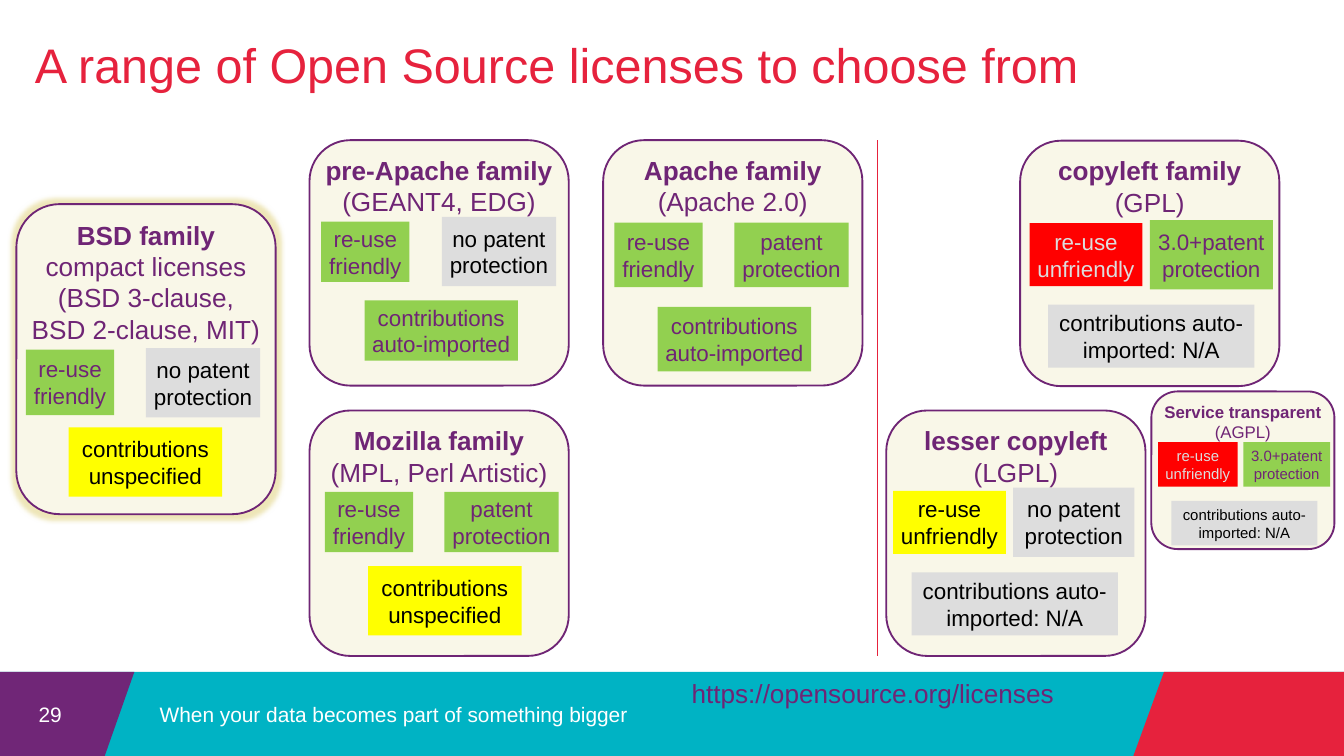
"""Build a slide that compares families of Open Source licenses."""
from lxml import etree
from pptx import Presentation
from pptx.dml.color import RGBColor
from pptx.enum.shapes import MSO_CONNECTOR, MSO_SHAPE
from pptx.enum.text import MSO_ANCHOR, MSO_AUTO_SIZE, PP_ALIGN
from pptx.oxml.ns import qn
from pptx.util import Cm, Pt

RECT, ROUND = MSO_SHAPE.RECTANGLE, MSO_SHAPE.ROUNDED_RECTANGLE
STRAIGHT = MSO_CONNECTOR.STRAIGHT
TOP, MIDDLE = MSO_ANCHOR.TOP, MSO_ANCHOR.MIDDLE
LEFT, CENTER = PP_ALIGN.LEFT, PP_ALIGN.CENTER
NO_FIT = MSO_AUTO_SIZE.NONE

WIDTH, HEIGHT, FOOTER_TOP = 25.4, 14.29, 12.7
CARD_W, CARD_H = 4.9, 4.64

COLORS = {
    "purple": "6F2575", "band": "702677", "teal": "00B3C4", "red": "E6223D",
    "divider": "E6223C", "cream": "F9F7E8", "glow": "E3D68A", "white": "FFFFFF",
    "black": "000000", "green": "92D050", "gray": "DDDDDD", "yellow": "FFFF00",
    "alert": "FF0000",
}
CHIP_TEXT = {"green": "purple", "gray": "black", "yellow": "black", "alert": "gray"}

FRIENDLY, UNFRIENDLY = "re-use friendly", "re-use unfriendly"
PATENT, NO_PATENT, PATENT_3 = "patent protection", "no patent protection", "3.0+patent protection"
IMPORTED, UNSPECIFIED = "contributions auto-imported", "contributions unspecified"
NOT_APPLICABLE = "contributions auto-imported: N/A"

FULL = {"size": 14, "chip_size": 12, "inset": 0.14}
SMALL = {"size": 9, "chip_size": 8, "inset": 0.08}

FAMILIES = [
    ("BSD family", "compact licenses (BSD 3-clause, BSD 2-clause, MIT)",
     (0.31, 3.86, CARD_W, 5.86), FULL, [
         (FRIENDLY, "green", (0.49, 6.61, 1.67, 1.24)),
         (NO_PATENT, "gray", (2.76, 6.58, 2.16, 1.31)),
         (UNSPECIFIED, "yellow", (1.3, 8.08, 2.9, 1.31))]),
    ("Mozilla family", "(MPL, Perl Artistic)", (5.85, 7.76, CARD_W, CARD_H), FULL, [
        (FRIENDLY, "green", (6.14, 9.3, 1.67, 1.14)),
        (PATENT, "green", (8.4, 9.3, 2.16, 1.14)),
        (UNSPECIFIED, "yellow", (6.96, 10.7, 2.9, 1.31))]),
    ("Apache family", "(Apache 2.0)", (11.4, 2.65, CARD_W, CARD_H), FULL, [
        (FRIENDLY, "green", (11.61, 4.21, 1.67, 1.22)),
        (PATENT, "green", (13.88, 4.21, 2.16, 1.22)),
        (IMPORTED, "green", (12.43, 5.8, 2.9, 1.22))]),
    ("copyleft family", "(GPL)", (19.28, 2.66, CARD_W, CARD_H), FULL, [
        (UNFRIENDLY, "alert", (19.46, 4.22, 2.13, 1.19)),
        (PATENT_3, "green", (21.73, 4.16, 2.33, 1.31)),
        (NOT_APPLICABLE, "gray", (19.81, 5.76, 3.9, 1.19))]),
    ("lesser copyleft", "(LGPL)", (16.75, 7.76, CARD_W, CARD_H), FULL, [
        (UNFRIENDLY, "yellow", (16.88, 9.28, 2.13, 1.19)),
        (NO_PATENT, "gray", (19.15, 9.22, 2.29, 1.31)),
        (NOT_APPLICABLE, "gray", (17.23, 10.82, 3.9, 1.19))]),
    ("pre-Apache family", "(GEANT4, EDG)", (5.85, 2.65, CARD_W, CARD_H), FULL, [
        (FRIENDLY, "green", (6.07, 4.19, 1.67, 1.14)),
        (NO_PATENT, "gray", (8.35, 4.1, 2.16, 1.31)),
        (IMPORTED, "green", (6.89, 5.68, 2.9, 1.14))]),
    ("Service transparent", "(AGPL)", (21.76, 7.4, 3.46, 2.98), SMALL, [
        (UNFRIENDLY, "alert", (21.89, 8.36, 1.5, 0.84)),
        (PATENT_3, "green", (23.5, 8.36, 1.64, 0.84)),
        (NOT_APPLICABLE, "gray", (22.14, 9.47, 2.76, 0.84))]),
]


def rgb(name):
    """Return the named colour."""
    return RGBColor.from_string(COLORS[name])


def cm(box):
    """Convert numbers in centimetres to lengths."""
    return [Cm(v) for v in box]


def set_attrs(obj, values):
    """Set each attribute of obj from a dict."""
    for name, value in values.items():
        setattr(obj, name, value)


def format_frame(tf, inset=(0, 0), anchor=MIDDLE, wrap=True):
    """Set the insets (sides, top and bottom), anchor and wrapping of a frame."""
    side, end = cm(inset)
    set_attrs(tf, {
        "margin_left": side, "margin_right": side, "margin_top": end,
        "margin_bottom": end, "vertical_anchor": anchor, "word_wrap": wrap,
        "auto_size": NO_FIT})


def write(p, text, size, color, align=LEFT, bold=False):
    """Write one run of formatted text into a paragraph."""
    p.alignment = align
    r = p.add_run()
    r.text = text
    set_attrs(r.font, {"name": "Arial", "size": Pt(size), "bold": bold})
    r.font.color.rgb = rgb(color)


def paint(sp, fill, line=None):
    """Give a shape a plain fill and an optional outline."""
    sp.shadow.inherit = False
    sp.fill.solid()
    sp.fill.fore_color.rgb = rgb(fill)
    if line:
        sp.line.color.rgb = rgb(line)
        sp.line.width = Pt(1)
    else:
        sp.line.fill.background()


def add_block(shapes, kind, box, fill, line=None):
    """Add a preset shape."""
    sp = shapes.add_shape(kind, *cm(box))
    paint(sp, fill, line)
    return sp


def add_polygon(shapes, points, fill):
    """Add a filled polygon."""
    start, *rest = [tuple(cm(point)) for point in points]
    builder = shapes.build_freeform(*start)
    builder.add_line_segments(rest)
    paint(builder.convert_to_shape(), fill)


def add_label(shapes, text, box, size, color, inset=(0, 0), wrap=True):
    """Add a text box."""
    tf = shapes.add_textbox(*cm(box)).text_frame
    format_frame(tf, inset, wrap=wrap)
    write(tf.paragraphs[0], text, size, color)


def add_glow(sp):
    """Surround a shape with a soft glow."""
    effects = sp._element.spPr.find(qn("a:effectLst"))
    glow = etree.SubElement(effects, qn("a:glow"), rad=str(Pt(5)))
    color = etree.SubElement(glow, qn("a:srgbClr"), val=COLORS["glow"])
    etree.SubElement(color, qn("a:alpha"), val="60000")


def add_family(slide, name, licenses, box, style, chips):
    """Add a license family: a card with its chips, and return the card."""
    shapes = slide.shapes.add_group_shape().shapes
    card = add_block(shapes, ROUND, box, "cream", "purple")
    tf = card.text_frame
    format_frame(tf, (0, 0.04), TOP)
    write(tf.paragraphs[0], name, style["size"], "purple", CENTER, True)
    write(tf.add_paragraph(), licenses, style["size"], "purple", CENTER)
    for text, fill, chip_box in chips:
        tf = add_block(shapes, RECT, chip_box, fill).text_frame
        format_frame(tf, (style["inset"], style["inset"]))
        write(tf.paragraphs[0], text, style["chip_size"], CHIP_TEXT[fill], CENTER)
    return card


def add_divider(shapes):
    """Add the thin line left of the copyleft families."""
    line = shapes.add_connector(STRAIGHT, *cm((16.57, 2.65, 16.57, 12.4)))
    line.line.color.rgb = rgb("divider")
    line.line.width = Pt(0.25)
    etree.SubElement(line._element.spPr, qn("a:effectLst"))


def add_footer(shapes):
    """Add the footer bands and their texts."""
    add_block(shapes, RECT, (0, FOOTER_TOP, WIDTH, HEIGHT - FOOTER_TOP), "teal")
    add_polygon(shapes, [(0, FOOTER_TOP), (2.54, FOOTER_TOP), (1.98, HEIGHT), (0, HEIGHT)], "band")
    add_polygon(shapes, [(22, FOOTER_TOP), (WIDTH, FOOTER_TOP), (WIDTH, HEIGHT), (21.42, HEIGHT)], "red")
    add_label(shapes, "https://opensource.org/licenses", (12.92, 12.65, 8.13, 0.89), 14, "purple", (0.15, 0.15))
    add_label(shapes, "29", (0.73, 13.26, 0.48, 0.48), 11.2, "white", wrap=False)
    add_label(shapes, "When your data becomes part of something bigger",
              (2.77, 12.8, 18.29, 1.4), 11.2, "white", (0.25, 0.13))


def add_title(slide, text):
    """Place and fill the title."""
    title = slide.shapes.title
    names = ("left", "top", "width", "height")
    set_attrs(title, dict(zip(names, cm((0.66, 0.66, 24.08, 1.12)))))
    format_frame(title.text_frame)
    write(title.text_frame.paragraphs[0], text, 26, "red")


def main():
    """Build and save the slide."""
    prs = Presentation()
    prs.slide_width, prs.slide_height = cm((WIDTH, HEIGHT))
    slide = prs.slides.add_slide(prs.slide_layouts[5])
    add_title(slide, "A range of Open Source licenses to choose from")
    add_footer(slide.shapes)
    cards = [add_family(slide, *family) for family in FAMILIES]
    add_glow(cards[0])
    add_divider(slide.shapes)
    prs.save("out.pptx")


if __name__ == "__main__":
    main()
